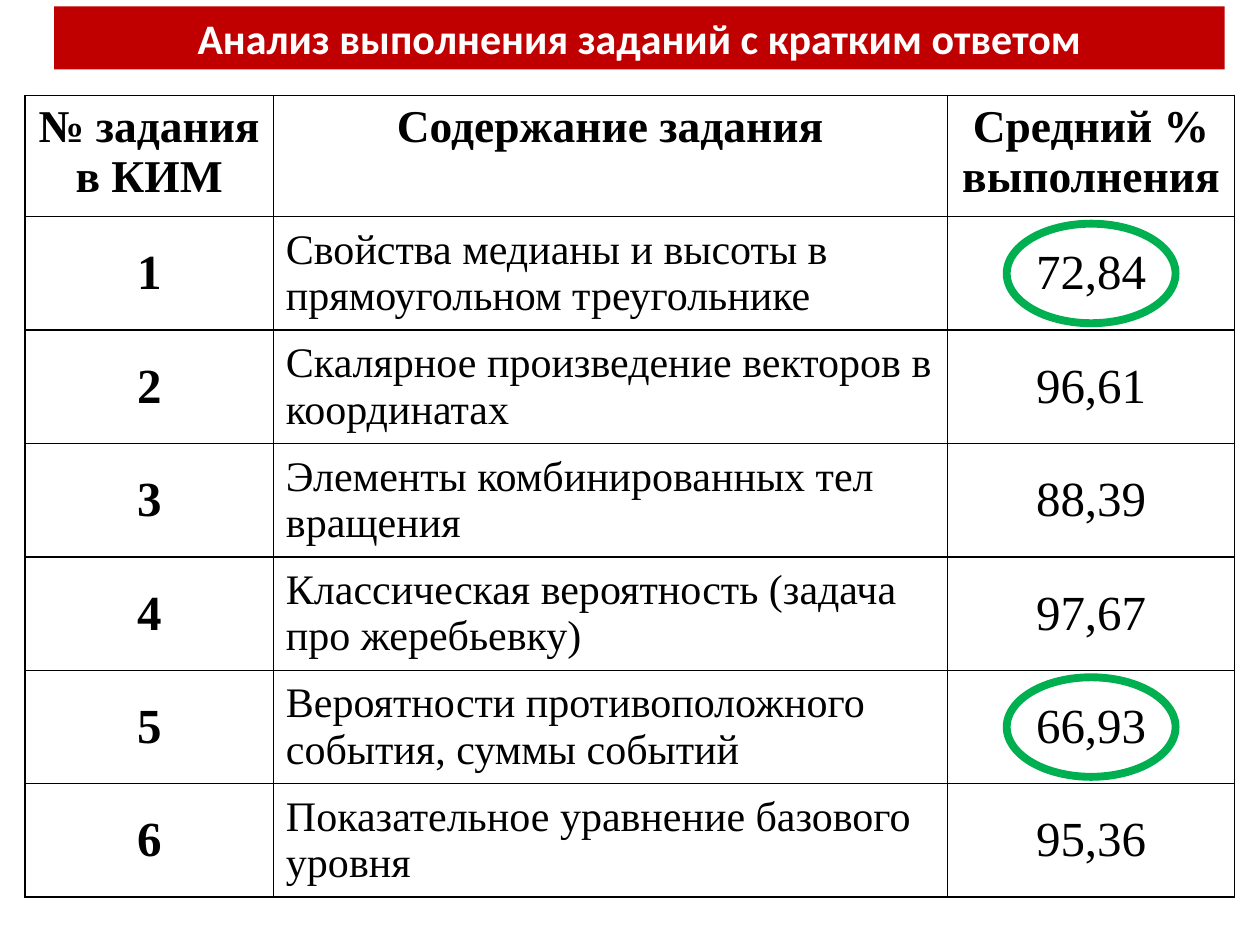
from dataclasses import dataclass

from lxml import etree
from pptx import Presentation
from pptx import util as u
from pptx.dml.color import RGBColor
from pptx.enum import shapes, text
from pptx.oxml.ns import qn


@dataclass(frozen=True)
class Theme:
    banner: str = "C00000"
    banner_text: str = "FFFFFF"
    ink: str = "000000"
    ring: str = "00B050"
    title_font: str = "Calibri"
    table_font: str = "Times New Roman"
    title_size: int = 24
    header_size: int = 26
    number_size: int = 28
    content_size: int = 24
    border: float = 1
    ring_width: float = 4.5


@dataclass(frozen=True)
class Task:
    content: str
    percent: str
    ringed: bool = False


THEME = Theme()
HEADERS = ("№ задания в КИМ", "Содержание задания", "Средний % выполнения")
TASKS = (
    Task("Свойства медианы и высоты в прямоугольном треугольнике", "72,84", True),
    Task("Скалярное произведение векторов в координатах", "96,61"),
    Task("Элементы комбинированных тел вращения", "88,39"),
    Task("Классическая вероятность (задача про жеребьевку)", "97,67"),
    Task("Вероятности противоположного события, суммы событий", "66,93", True),
    Task("Показательное уравнение базового уровня", "95,36"),
)
LEFT, TOP = 0.2, 0.76
COLUMNS = (1.97, 5.35, 2.28)
HEADER_H, ROW_H = 0.96, 0.9
RING_W, RING_H = 1.34, 0.79


def write(tf, words: str, *, size: float, font: str = THEME.table_font,
          color: str = THEME.ink, bold: bool = False,
          align=text.PP_ALIGN.CENTER, after: float = 0) -> None:
    p = tf.paragraphs[0]
    p.alignment = align
    p.space_after = u.Pt(after)
    r = p.add_run()
    r.text = words
    r.font.name, r.font.size, r.font.bold = font, u.Pt(size), bold
    r.font.color.rgb = RGBColor.from_string(color)


def add_title(s) -> None:
    sp = s.shapes.title
    sp.left, sp.top = u.Inches(0.43), u.Inches(0.05)
    sp.width, sp.height = u.Inches(9.29), u.Inches(0.5)
    sp.fill.solid()
    sp.fill.fore_color.rgb = RGBColor.from_string(THEME.banner)
    tf = sp.text_frame
    tf.word_wrap = True
    tf.auto_size = text.MSO_AUTO_SIZE.NONE
    tf.vertical_anchor = text.MSO_ANCHOR.TOP
    write(tf, "Анализ выполнения заданий с кратким ответом", size=THEME.title_size,
          font=THEME.title_font, color=THEME.banner_text, bold=True, after=6)


def outline_cell(cell) -> None:
    """Draw all four borders and clear the style's fill."""
    tc_pr = cell._tc.get_or_add_tcPr()
    for side in ("lnL", "lnR", "lnT", "lnB"):
        ln = etree.SubElement(tc_pr, qn(f"a:{side}"), w=str(u.Pt(THEME.border)))
        fill = etree.SubElement(ln, qn("a:solidFill"))
        etree.SubElement(fill, qn("a:srgbClr"), val=THEME.ink)
    cell.fill.background()


def add_task_table(s) -> None:
    height = HEADER_H + ROW_H * len(TASKS)
    table = s.shapes.add_table(
        len(TASKS) + 1, len(COLUMNS), u.Inches(LEFT), u.Inches(TOP),
        u.Inches(sum(COLUMNS)), u.Inches(height)).table
    table.horz_banding = table.first_row = False
    for column, width in zip(table.columns, COLUMNS):
        column.width = u.Inches(width)
    for i, row in enumerate(table.rows):
        row.height = u.Inches(ROW_H if i else HEADER_H)
        for cell in row.cells:
            outline_cell(cell)
            if i:
                cell.vertical_anchor = text.MSO_ANCHOR.MIDDLE
    for j, header in enumerate(HEADERS):
        write(table.cell(0, j).text_frame, header, size=THEME.header_size, bold=True)
    for i, task in enumerate(TASKS, 1):
        number, content, percent = table.rows[i].cells
        write(number.text_frame, str(i), size=THEME.number_size, bold=True)
        write(content.text_frame, task.content, size=THEME.content_size,
              align=text.PP_ALIGN.LEFT)
        percent.margin_left = percent.margin_right = u.Inches(0.04)
        percent.margin_top = percent.margin_bottom = 0
        write(percent.text_frame, task.percent, size=THEME.number_size)


def add_ring(s, row: int) -> None:
    """Ring the percentage of the given task row, counted from zero."""
    x = LEFT + sum(COLUMNS) - COLUMNS[-1] / 2
    y = TOP + HEADER_H + (row + 0.5) * ROW_H
    sp = s.shapes.add_shape(
        shapes.MSO_SHAPE.OVAL, u.Inches(x - RING_W / 2), u.Inches(y - RING_H / 2),
        u.Inches(RING_W), u.Inches(RING_H))
    sp.shadow.inherit = False
    sp.fill.background()
    sp.line.color.rgb = RGBColor.from_string(THEME.ring)
    sp.line.width = u.Pt(THEME.ring_width)


def main() -> None:
    prs = Presentation()
    prs.slide_width, prs.slide_height = u.Inches(10), u.Inches(7.5)
    s = prs.slides.add_slide(prs.slide_layouts[5])
    add_title(s)
    add_task_table(s)
    for row, task in enumerate(TASKS):
        if task.ringed:
            add_ring(s, row)
    prs.save("out.pptx")


if __name__ == "__main__":
    main()
